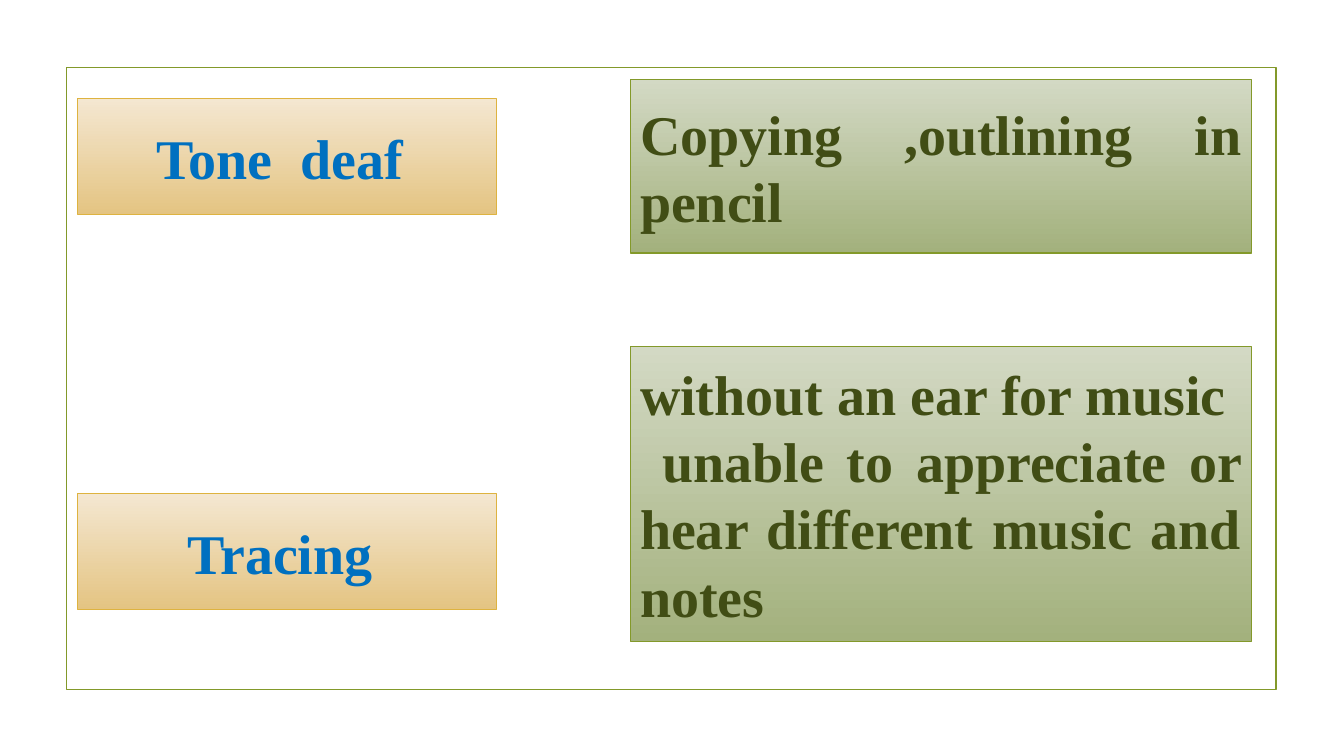
"""Build a matching exercise slide with terms on the left and meanings on the right."""
from pptx import Presentation
from pptx.dml.color import RGBColor
from pptx.enum.shapes import MSO_SHAPE
from pptx.enum.text import MSO_ANCHOR, PP_ALIGN
from pptx.util import Inches, Pt

TERMS = [
    (0.98, "Tone  deaf "),
    (4.9, "Tracing "),
]
MEANINGS = [
    (0.79, 1.72, ["Copying ,outlining in pencil"]),
    (3.44, 2.92, ["without an ear for music",
                  " unable to appreciate or hear different music and notes"]),
]
TERM_LEFT, TERM_WIDTH, TERM_HEIGHT = 0.77, 4.15, 1.15
MEANING_LEFT, MEANING_WIDTH = 6.25, 6.16
GREEN = "83992A"
TERM_STYLE = (("F4E7D1", "E4C482"), "DEB340", "0070C0", PP_ALIGN.CENTER)
MEANING_STYLE = (("D3D9C4", "A3B17D"), GREEN, "414D15", PP_ALIGN.JUSTIFY)


def color(value):
    return RGBColor.from_string(value)


def add_rectangle(slide, box, outline, weight):
    rectangle = slide.shapes.add_shape(MSO_SHAPE.RECTANGLE, *map(Inches, box))
    rectangle.shadow.inherit = False
    rectangle.line.color.rgb = color(outline)
    rectangle.line.width = Pt(weight)
    return rectangle


def add_card(slide, box, lines, style):
    shades, outline, ink, alignment = style
    card = add_rectangle(slide, box, outline, 0.75)
    card.fill.gradient()
    card.fill.gradient_angle = 270
    for stop, shade, position in zip(card.fill.gradient_stops, shades, (0, 1)):
        stop.color.rgb = color(shade)
        stop.position = position
    frame = card.text_frame
    frame.word_wrap = True
    frame.vertical_anchor = MSO_ANCHOR.MIDDLE
    frame.text = "\n".join(lines)
    for paragraph in frame.paragraphs:
        paragraph.alignment = alignment
        for run in paragraph.runs:
            run.font.name = "Times New Roman"
            run.font.size = Pt(40)
            run.font.bold = True
            run.font.color.rgb = color(ink)


def main():
    deck = Presentation()
    deck.slide_width, deck.slide_height = Inches(13.33), Inches(7.5)
    slide = deck.slides.add_slide(deck.slide_layouts[6])
    border = add_rectangle(slide, (0.66, 0.67, 12, 6.17), GREEN, 1.25)
    border.fill.background()
    for top, term in TERMS:
        add_card(slide, (TERM_LEFT, top, TERM_WIDTH, TERM_HEIGHT), [term], TERM_STYLE)
    for top, height, lines in MEANINGS:
        add_card(slide, (MEANING_LEFT, top, MEANING_WIDTH, height), lines, MEANING_STYLE)
    deck.save("out.pptx")


if __name__ == "__main__":
    main()
